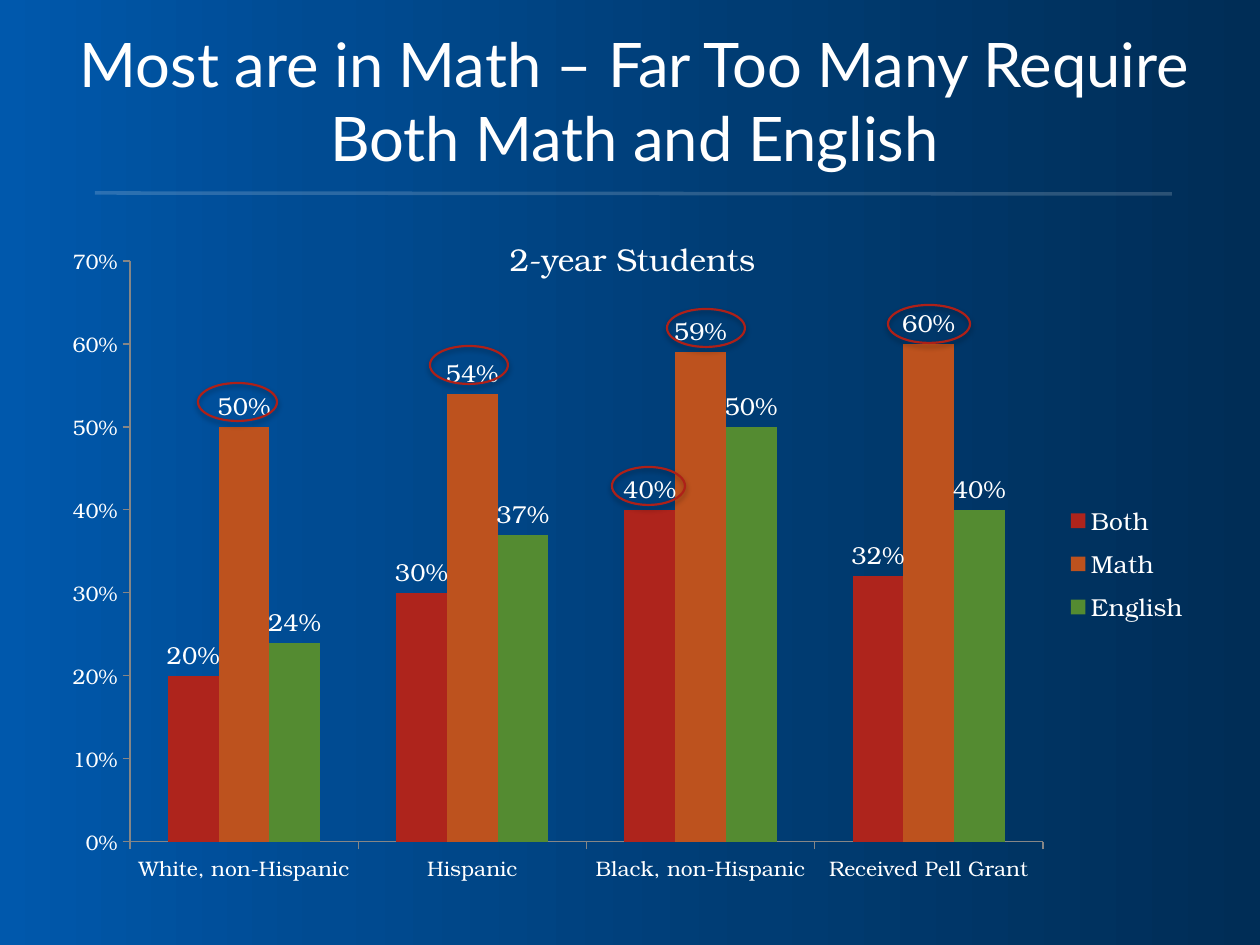
"""Build a slide with a column chart of 2-year students by subject."""
from dataclasses import dataclass

import pptx
import pptx.chart.data
import pptx.dml.color
import pptx.enum.chart
import pptx.enum.shapes
import pptx.enum.text
import pptx.oxml
import pptx.oxml.ns
import pptx.util

RGB = pptx.dml.color.RGBColor
WHITE = RGB(0xFF, 0xFF, 0xFF)
BLUE = RGB(0x00, 0x5A, 0xAC)
RING = RGB(0xAE, 0x20, 0x18)
AXIS = RGB(0x86, 0x86, 0x86)
RED = RGB(0xAE, 0x24, 0x1C)
ORANGE = RGB(0xBD, 0x52, 0x1E)
GREEN = RGB(0x54, 0x8B, 0x31)
STOPS = [
    (0, RGB(0x00, 0x58, 0xAC)),
    (26, RGB(0x00, 0x4B, 0x92)),
    (60, RGB(0x00, 0x3C, 0x73)),
    (100, RGB(0x00, 0x2D, 0x56)),
]
SERIF = "TeX Gyre Bonum"
SANS = "Lato"
SCALE = 914400 / 126
SPACE = pptx.oxml.ns.nsdecls("a")


@dataclass
class Box:
    left: int
    top: int
    width: int
    height: int

    def emu(self) -> list[int]:
        return [px(n) for n in (self.left, self.top, self.width, self.height)]


@dataclass
class Series:
    name: str
    color: RGB
    values: tuple[float, ...]


@dataclass
class Label:
    text: str
    box: Box
    font: str
    size: float
    anchor: pptx.enum.text.MSO_ANCHOR


GROUPS = ["White, non-Hispanic", "Hispanic", "Black, non-Hispanic", "Received Pell Grant"]
SERIES = [
    Series("Both", RED, (0.20, 0.30, 0.40, 0.32)),
    Series("Math", ORANGE, (0.50, 0.54, 0.59, 0.60)),
    Series("English", GREEN, (0.24, 0.37, 0.50, 0.40)),
]
CHART = Box(49, 234, 1155, 662)
PLOT = Box(130, 261, 913, 581)
LEGEND = Box(1064, 494, 126, 140)
RINGS = [
    Box(198, 383, 79, 38),
    Box(888, 305, 82, 38),
    Box(667, 309, 78, 38),
    Box(430, 346, 78, 38),
    Box(612, 467, 73, 38),
]
LABELS = [
    Label("2-year Students", Box(368, 234, 529, 50), SERIF, 18, pptx.enum.text.MSO_ANCHOR.TOP),
    Label("Most are in Math – Far Too Many Require Both Math and English",
          Box(63, 21, 1143, 158), SANS, 35.1, pptx.enum.text.MSO_ANCHOR.MIDDLE),
]


def px(count: int) -> int:
    return round(count * SCALE)


def style(font, size: float, name: str = SERIF) -> None:
    font.size = pptx.util.Pt(size)
    font.name = name
    font.color.rgb = WHITE


def draw_back(slide) -> None:
    slide.background.fill.solid()
    slide.background.fill.fore_color.rgb = BLUE
    shape = slide.shapes.add_shape(pptx.enum.shapes.MSO_SHAPE.RECTANGLE, *Box(0, 0, 1260, 945).emu())
    shape.shadow.inherit = False
    shape.line.fill.background()
    shape.fill.gradient()
    shape.fill.gradient_angle = 0
    stops = shape._element.spPr.find(".//" + pptx.oxml.ns.qn("a:gsLst"))
    stops.clear()
    for place, color in STOPS:
        stops.append(pptx.oxml.parse_xml(
            f'<a:gs {SPACE} pos="{place * 1000}"><a:srgbClr val="{color}"/></a:gs>'))


def place_part(parent, box: Box, inner: bool) -> None:
    old = parent.find(pptx.oxml.ns.qn("c:layout"))
    if old is not None:
        parent.remove(old)
    parts = {
        "x": (box.left - CHART.left) / CHART.width,
        "y": (box.top - CHART.top) / CHART.height,
        "w": box.width / CHART.width,
        "h": box.height / CHART.height,
    }
    target = '<c:layoutTarget val="inner"/>' if inner else ""
    modes = "".join(f'<c:{key}Mode val="edge"/>' for key in "xy")
    sizes = "".join(f'<c:{key} val="{part:.4f}"/>' for key, part in parts.items())
    layout = pptx.oxml.parse_xml(
        f'<c:layout {pptx.oxml.ns.nsdecls("c")}><c:manualLayout>'
        f'{target}{modes}{sizes}</c:manualLayout></c:layout>')
    parent.insert(0 if inner else 1, layout)


def draw_chart(slide) -> None:
    enum = pptx.enum.chart
    data = pptx.chart.data.CategoryChartData(number_format="0%")
    data.categories = GROUPS
    for item in SERIES:
        data.add_series(item.name, item.values)
    chart = slide.shapes.add_chart(enum.XL_CHART_TYPE.COLUMN_CLUSTERED, *CHART.emu(), data).chart
    style(chart.font, 10)
    chart.has_title = False
    chart.has_legend = True
    chart.legend.position = enum.XL_LEGEND_POSITION.RIGHT
    chart.legend.include_in_layout = False
    style(chart.legend.font, 14)
    plot = chart.plots[0]
    plot.gap_width = 150
    plot.overlap = 0
    plot.vary_by_categories = False
    for item, series in zip(SERIES, plot.series):
        series.format.fill.solid()
        series.format.fill.fore_color.rgb = item.color
        series.invert_if_negative = False
        labels = series.data_labels
        labels.show_value = True
        labels.number_format = "0%"
        labels.number_format_is_linked = False
        labels.position = enum.XL_LABEL_POSITION.OUTSIDE_END
        style(labels.font, 14)
    for axis in (chart.category_axis, chart.value_axis):
        axis.has_major_gridlines = False
        axis.major_tick_mark = enum.XL_TICK_MARK.OUTSIDE
        axis.format.line.color.rgb = AXIS
        style(axis.tick_labels.font, 12)
    scale = chart.value_axis
    scale.minimum_scale, scale.maximum_scale, scale.major_unit = 0, 0.7, 0.1
    scale.tick_labels.number_format = "0%"
    scale.tick_labels.number_format_is_linked = False
    place_part(chart._chartSpace.chart.plotArea, PLOT, True)
    place_part(chart.legend._element, LEGEND, False)


def draw_ring(slide, box: Box) -> None:
    ring = slide.shapes.add_shape(pptx.enum.shapes.MSO_SHAPE.OVAL, *box.emu())
    ring.fill.background()
    ring.line.color.rgb = RING
    ring.line.width = pptx.util.Pt(1.25)
    ring.shadow.inherit = False
    ring._element.spPr.find(pptx.oxml.ns.qn("a:effectLst")).append(pptx.oxml.parse_xml(
        f'<a:outerShdw {SPACE} blurRad="39370" dist="22860" dir="5400000" rotWithShape="0">'
        '<a:srgbClr val="000000"><a:alpha val="35000"/></a:srgbClr></a:outerShdw>'))


def draw_label(slide, label: Label) -> None:
    frame = slide.shapes.add_textbox(*label.box.emu()).text_frame
    frame.word_wrap = True
    frame.vertical_anchor = label.anchor
    frame.text = label.text
    line = frame.paragraphs[0]
    line.alignment = pptx.enum.text.PP_ALIGN.CENTER
    style(line.runs[0].font, label.size, label.font)


def draw_rule(slide) -> None:
    ends = [px(n) for n in (95, 193, 1172, 194)]
    rule = slide.shapes.add_connector(pptx.enum.shapes.MSO_CONNECTOR.STRAIGHT, *ends)
    rule.line.color.rgb = WHITE
    rule.line.width = pptx.util.Pt(2)
    props = rule._element.spPr
    props.find(".//" + pptx.oxml.ns.qn("a:srgbClr")).append(
        pptx.oxml.parse_xml(f'<a:alpha {SPACE} val="16000"/>'))
    props.append(pptx.oxml.parse_xml(f"<a:effectLst {SPACE}/>"))


def main() -> None:
    deck = pptx.Presentation()
    deck.slide_width, deck.slide_height = px(1260), px(945)
    slide = deck.slides.add_slide(deck.slide_layouts[6])
    draw_back(slide)
    draw_chart(slide)
    for box in RINGS:
        draw_ring(slide, box)
    for label in LABELS:
        draw_label(slide, label)
    draw_rule(slide)
    deck.save("out.pptx")


if __name__ == "__main__":
    main()
